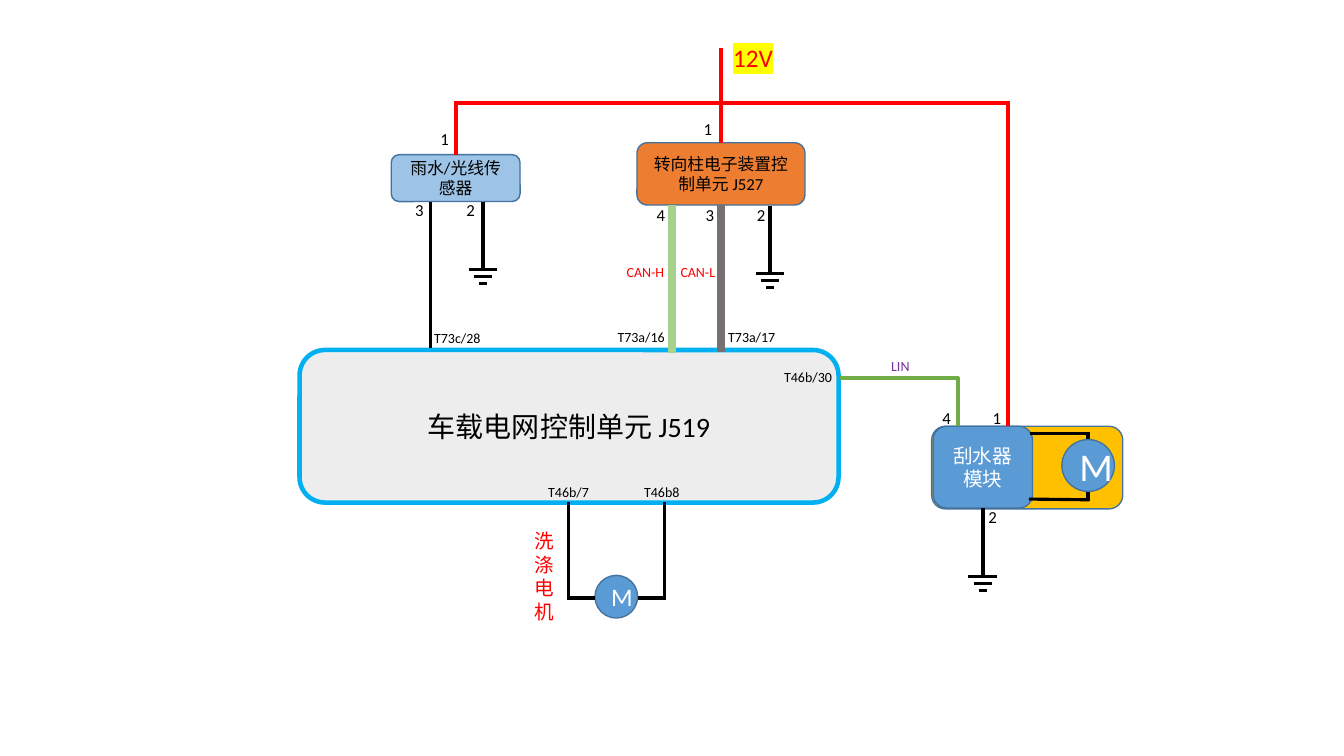
from lxml import etree
from pptx import Presentation
from pptx.dml.color import RGBColor as RGB
from pptx.enum.shapes import MSO_CONNECTOR as LINK, MSO_SHAPE as SHAPE
from pptx.enum.text import MSO_ANCHOR as ANCHOR, PP_ALIGN as ALIGN
from pptx.oxml.ns import qn
from pptx.util import Pt

HUE = {
    "black": "000000", "white": "FFFFFF", "red": "FF0000", "yellow": "FFFF00",
    "gold": "FFC000", "blue": "5B9BD5", "navy": "43739E", "sky": "9DC3E6",
    "cyan": "00B0F0", "pale": "EDEDED", "orange": "ED7D31", "green": "70AD47",
    "lime": "A9D18E", "gray": "767171", "purple": "7030A0",
}

deck = Presentation()
deck.slide_width, deck.slide_height = Pt(960), Pt(540)
slide = deck.slides.add_slide(deck.slide_layouts[6])
shapes = slide.shapes


def wire(x1, y1, x2, y2, hue="black", width=2.25, host=shapes):
    line = host.add_connector(LINK.STRAIGHT, Pt(x1), Pt(y1), Pt(x2), Pt(y2))
    line.line.color.rgb = RGB.from_string(HUE[hue])
    line.line.width = Pt(width)
    etree.SubElement(line._element.spPr, qn("a:effectLst"))
    return line


def write(shape, text, size, hue):
    """Put one styled line of text in a shape and return its run."""
    frame = shape.text_frame
    frame.word_wrap = True
    frame.text = text
    run = frame.paragraphs[0].runs[0]
    run.font.size = Pt(size)
    run.font.name = "Calibri"
    run.font.color.rgb = RGB.from_string(HUE[hue])
    return run


# Loop of the wiper motor lies between the housing and the motor
BOX, DISK = SHAPE.ROUNDED_RECTANGLE, SHAPE.OVAL
units = {
    "housing": (BOX, 665.5, 304.5, 136.5, 59, "gold", "navy", 1, "", 0, "black"),
    "wiper": (BOX, 666.5, 304.5, 71, 58.5, "blue", "navy", 1, "刮水器模块", 14, "white"),
    "J519": (BOX, 214, 250, 385, 109, "pale", "cyan", 3.25, "车载电网控制单元 J519", 20, "black"),
    "J527": (BOX, 455, 102, 120, 44.5, "orange", "navy", 1, "转向柱电子装置控制单元 J527", 12, "black"),
    "sensor": (BOX, 279.5, 110.5, 92, 33.5, "sky", "navy", 1, "雨水/光线传感器", 12, "black"),
    "motor": (DISK, 758.5, 314, 37.5, 37, "blue", "navy", 1, "M", 28, "white"),
    "washer": (DISK, 425, 411, 30.5, 30.5, "blue", "navy", 1, "M", 18, "white"),
}
made = {}
for name, (kind, x, y, w, h, fill, edge, width, text, size, hue) in units.items():
    if name == "motor":
        wire(735.5, 309.5, 778.5, 309.5)
        wire(735, 356.5, 778, 357)
        for top in (309, 349):
            wire(777, top, 777, top + 9, width=2.5)
    unit = made[name] = shapes.add_shape(kind, Pt(x), Pt(y), Pt(w), Pt(h))
    unit.shadow.inherit = False
    unit.fill.solid()
    unit.fill.fore_color.rgb = RGB.from_string(HUE[fill])
    unit.line.color.rgb = RGB.from_string(HUE[edge])
    unit.line.width = Pt(width)
    if text:
        write(unit, text, size, hue)
        unit.text_frame.vertical_anchor = ANCHOR.MIDDLE
        unit.text_frame.paragraphs[0].alignment = ALIGN.CENTER

# 12 V supply
wire(324.5, 73.5, 720.5, 73.5, "red", 2.75)
wire(720, 72, 720, 304.5, "red", 2.75)
wire(325.5, 72, 325.5, 110.5, "red", 2.75).end_connect(made["sensor"], 0)
wire(515, 34, 515, 102, "red", 2.75).end_connect(made["J527"], 0)

# Bus and signal wires
wire(515, 146.5, 515, 251.5, "gray", 5.5).begin_connect(made["J527"], 2)
wire(480, 146.5, 480, 252, "lime", 5.5)
wire(600, 270, 685, 270, "green", 2.75)
wire(684, 269, 684, 304.5, "green", 2.75)
wire(307.5, 144, 307.5, 248.5)

# Washer motor loop
for x in (406, 474.5):
    wire(x, 358.5, x, 428)
for left in (405, 456):
    wire(left, 427, left + 20, 427, width=3)

# Grounds
for x, top, unit in ((345, 144, None), (550, 147, None), (702, 363, "wiper")):
    stem = wire(x, top, x, top + 48.5, width=2.5)
    if unit:
        stem.begin_connect(made[unit], 2)
    group = shapes.add_group_shape()
    for step, half in enumerate((10.25, 6.5, 2.75)):
        y = top + 48.5 + 5 * step
        wire(x - half, y, x + half, y, host=group.shapes)

pins = [
    (307.5, 88.5, "1"), (326, 139, "2"), (289.5, 139, "3"),
    (495.5, 81.5, "1"), (533.5, 142.5, "2"), (497, 142.5, "3"), (462, 142.5, "4"),
    (702, 287.5, "1"), (699, 358.5, "2"), (666, 287.5, "4"),
]
ports = [
    (303, 232, "T73c/28"), (434, 231, "T73a/16"), (513, 231, "T73a/17"),
    (553, 260, "T46b/30"), (384.5, 342, "T46b/7"), (453, 342, "T46b8"),
]
labels = [(x, y, 20, 21.5, text, 12, "black") for x, y, text in pins]
labels += [(x, y, 54, 15, text, 10, "black") for x, y, text in ports]
labels += [
    (440.5, 185, 46, 15, "CAN-H", 10, "red"),
    (479, 185, 46, 15, "CAN-L", 10, "red"),
    (629.5, 252, 36, 17, "LIN", 10, "purple"),
    (375, 374.5, 25, 76, "洗涤电机", 14, "red"),
    (516.5, 26.5, 51, 18, "12V", 18, "red"),
]
for x, y, w, h, text, size, hue in labels:
    label = shapes.add_textbox(Pt(x), Pt(y), Pt(w), Pt(h))
    run = write(label, text, size, hue)
    if text == "12V":
        mark = etree.Element(qn("a:highlight"))
        etree.SubElement(mark, qn("a:srgbClr"), val=HUE["yellow"])
        run.font._element.find(qn("a:solidFill")).addnext(mark)

deck.save("out.pptx")
